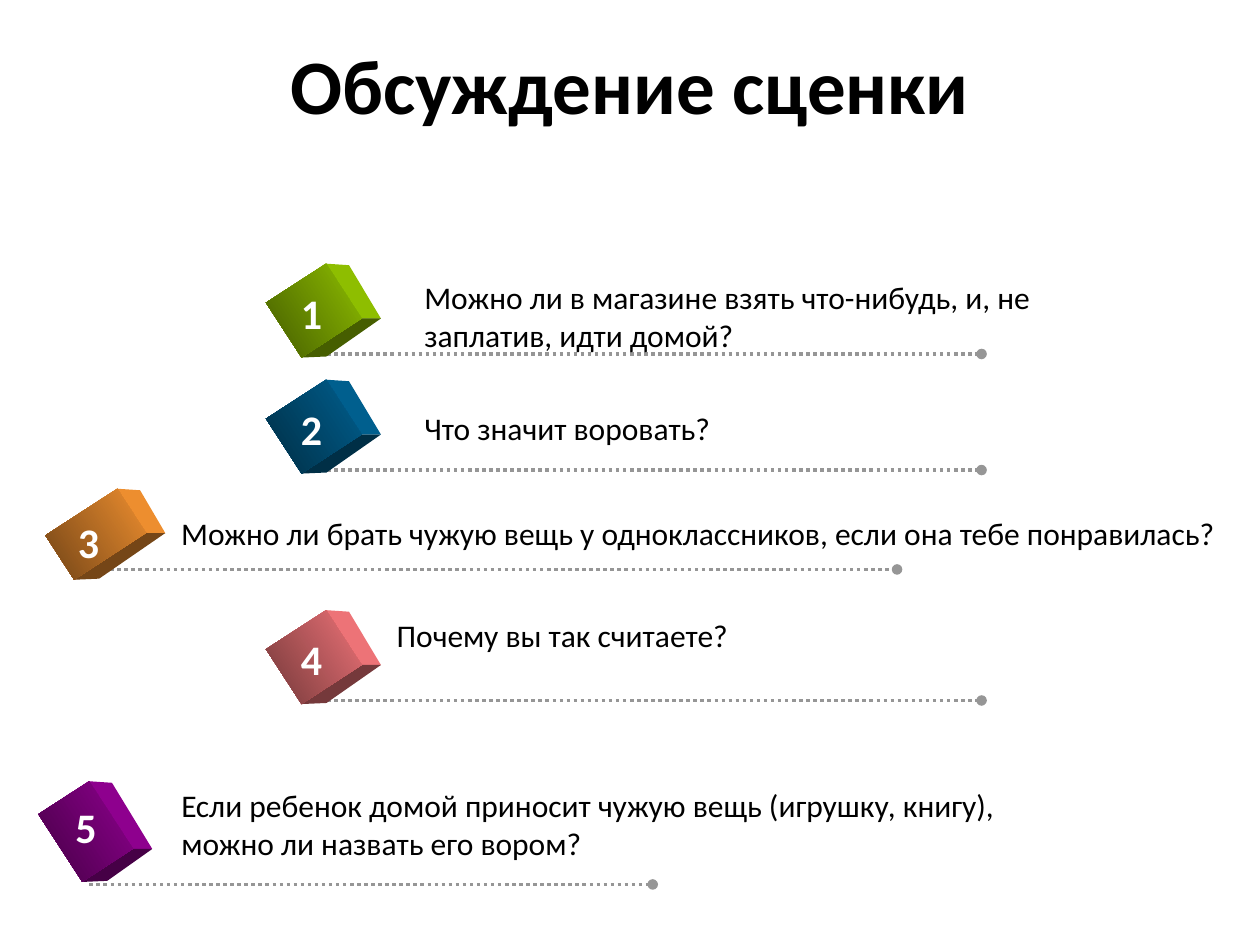
from dataclasses import dataclass
from math import cos, radians, sin

from lxml import etree
from pptx import Presentation
from pptx.dml.color import RGBColor
from pptx.enum.dml import MSO_LINE
from pptx.enum.shapes import MSO_CONNECTOR, MSO_SHAPE
from pptx.enum.text import MSO_ANCHOR, PP_ALIGN
from pptx.oxml.ns import qn
from pptx.util import Pt

RECTANGLE = MSO_SHAPE.RECTANGLE
STRAIGHT = MSO_CONNECTOR.STRAIGHT
DOTTED = MSO_LINE.ROUND_DOT
MIDDLE = MSO_ANCHOR.MIDDLE
TOP = MSO_ANCHOR.TOP
LEFT = PP_ALIGN.LEFT
CENTER = PP_ALIGN.CENTER

TILT = 57
# Depth of the cube behind the upper, right and lower corners of its front
DEPTH = ((13.1, 0.9), (11, 0), (14.3, -0.6))


@dataclass(frozen=True)
class Theme:
    font: str = "Calibri"
    text: str = "000000"
    number: str = "FFFFFF"
    rule: str = "969696"
    title_size: int = 44
    question_size: int = 18
    number_size: int = 24
    rule_width: int = 2
    front_shade: float = 0.45
    side_shade: float = 0.93
    bottom_shade: float = 0.46


THEME = Theme()


@dataclass
class Question:
    lines: tuple
    color: str
    text_box: tuple
    rule: tuple  # left, right, y
    cube: tuple  # left, top, width, height before tilting
    number_at: tuple


def centered_question(lines, color, text_box, rule_y):
    return Question(lines, color, text_box, (182.9, 560.9, rule_y),
                    (160.6, rule_y - 45.3, 37.4, 41), (164.9, rule_y - 41.8))


QUESTIONS = (
    centered_question(
        ("Можно ли в магазине взять что-нибудь, и, не заплатив, идти домой?",),
        "99CC00", (235.4, 155.5, 433.4, 51), 202.3),
    centered_question(("Что значит воровать?",),
                      "006699", (235.4, 230.4, 325.4, 29), 268.6),
    Question(
        ("Можно ли брать чужую вещь у одноклассников, "
         "если она тебе понравилась?",),
        "FF9933", (96.5, 290.2, 612, 29), (59, 512.6, 325.4),
        (39.6, 280.8, 30.2, 49), (37.4, 291.6)),
    centered_question(("Почему вы так считаете?",),
                      "FF7C80", (219.6, 348.5, 409, 58.3), 400.3),
    Question(
        ("Если ребенок домой приносит чужую вещь (игрушку, книгу),",
         "можно ли назвать его вором?"),
        "990099", (96.5, 445.7, 488.9, 80), (51.1, 373, 505.4),
        (25.9, 457.9, 46.1, 34.6), (36, 454.3)),
)


def shade(color, factor):
    return RGBColor(*(round(channel * factor)
                      for channel in RGBColor.from_string(color)))


def add_text(slide, box, lines, size, color=THEME.text, bold=False,
             align=LEFT, anchor=TOP, spacing=1.0):
    frame = slide.shapes.add_textbox(*map(Pt, box)).text_frame
    frame.word_wrap = True
    frame.vertical_anchor = anchor
    frame.text = "\n".join(lines)
    for paragraph in frame.paragraphs:
        paragraph.alignment = align
        paragraph.line_spacing = spacing
        paragraph.font.name = THEME.font
        paragraph.font.size = Pt(size)
        paragraph.font.bold = bold
        paragraph.font.color.rgb = RGBColor.from_string(color)


def add_rule(slide, left, right, y):
    """Dotted line that ends in a round dot."""
    rule = slide.shapes.add_connector(
        STRAIGHT, Pt(left), Pt(y), Pt(right), Pt(y))
    rule.line.color.rgb = RGBColor.from_string(THEME.rule)
    rule.line.width = Pt(THEME.rule_width)
    rule.line.dash_style = DOTTED
    properties = rule._element.spPr
    etree.SubElement(properties.find(qn("a:ln")), qn("a:tailEnd"), type="oval")
    etree.SubElement(properties, qn("a:effectLst"))


def add_face(slide, corners, color):
    """Flat side of a cube."""
    start, *others = [(Pt(x), Pt(y)) for x, y in corners]
    outline = slide.shapes.build_freeform(*start)
    outline.add_line_segments(others)
    face = outline.convert_to_shape()
    face.shadow.inherit = False
    face.fill.solid()
    face.fill.fore_color.rgb = color
    face.line.fill.background()


def add_cube(slide, left, top, width, height, color):
    angle = radians(TILT)
    center_x, center_y = left + width / 2, top + height / 2

    def tilted(x, y):
        return (center_x + x * cos(angle) - y * sin(angle),
                center_y + x * sin(angle) + y * cos(angle))

    half_w, half_h = width / 2, height / 2
    near = [tilted(-half_w, -half_h), tilted(half_w, -half_h),
            tilted(half_w, half_h)]
    far = [(x + dx, y + dy) for (x, y), (dx, dy) in zip(near, DEPTH)]
    for first, factor in enumerate((THEME.side_shade, THEME.bottom_shade)):
        second = first + 1
        add_face(slide, (near[first], far[first], far[second], near[second]),
                 shade(color, factor))

    front = slide.shapes.add_shape(
        RECTANGLE, *map(Pt, (left, top, width, height)))
    front.rotation = TILT
    front.shadow.inherit = False
    front.line.fill.background()
    front.fill.gradient()
    front.fill.gradient_angle = 270
    light, dark = front.fill.gradient_stops
    light.position, dark.position = 0, 1
    light.color.rgb = shade(color, THEME.side_shade)
    dark.color.rgb = shade(color, THEME.front_shade)


def add_question(slide, number, question):
    add_rule(slide, *question.rule)
    add_cube(slide, *question.cube, question.color)
    add_text(slide, question.text_box, question.lines, THEME.question_size)
    add_text(slide, (*question.number_at, 28, 36), (str(number),),
             THEME.number_size, THEME.number, bold=True)


def main():
    presentation = Presentation()
    presentation.slide_width, presentation.slide_height = Pt(720), Pt(540)
    slide = presentation.slides.add_slide(presentation.slide_layouts[6])
    add_text(slide, (49.7, 9.4, 620.6, 83.5), ("Обсуждение сценки",),
             THEME.title_size, bold=True, align=CENTER, anchor=MIDDLE,
             spacing=0.9)
    for number, question in enumerate(QUESTIONS, start=1):
        add_question(slide, number, question)
    presentation.save("out.pptx")


if __name__ == "__main__":
    main()
